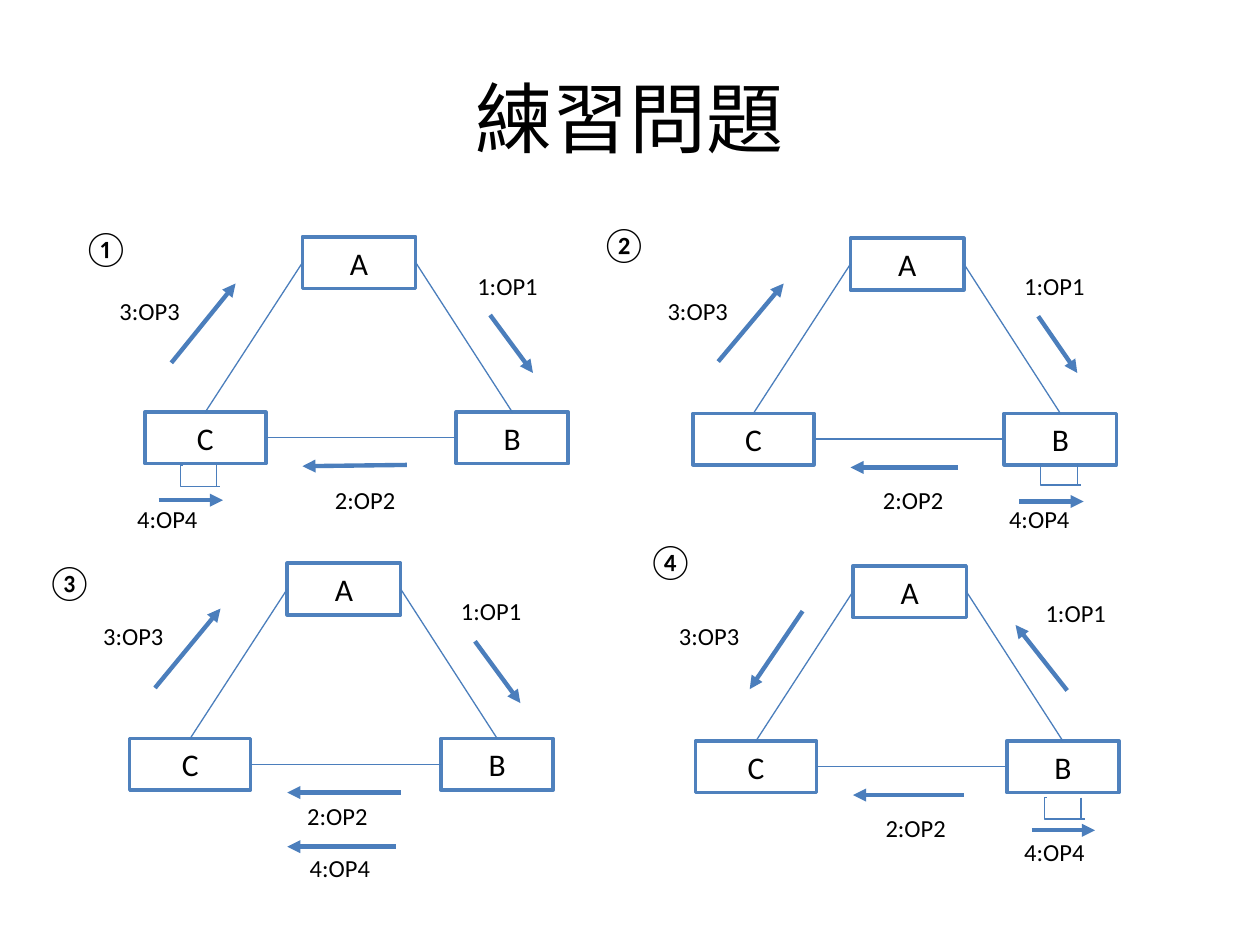
from lxml import etree
from pptx import Presentation
from pptx.dml.color import RGBColor
from pptx.enum.shapes import MSO_CONNECTOR, MSO_SHAPE
from pptx.enum.text import MSO_ANCHOR, MSO_AUTO_SIZE, PP_ALIGN
from pptx.oxml.ns import qn
from pptx.util import Pt

RECT = MSO_SHAPE.RECTANGLE
LINE, ELBOW = MSO_CONNECTOR.STRAIGHT, MSO_CONNECTOR.ELBOW
MIDDLE, CENTER = MSO_ANCHOR.MIDDLE, PP_ALIGN.CENTER
GROW = MSO_AUTO_SIZE.SHAPE_TO_FIT_TEXT
SCALE = 9144
BLACK, WHITE, EDGE, WIRE = "000000", "FFFFFF", "4F81BD", "4B7EBC"
TOP, LEFT, RIGHT = 0, 1, 3
NODES = {"A": (125, 0, 90), "C": (0, 139, 96), "B": (247, 139, 89)}
LINKS = [("C", TOP, "A", LEFT), ("B", LEFT, "C", RIGHT), ("B", TOP, "A", RIGHT)]
DIAGRAMS = [
    dict(box=(115, 188), mark=("①", -59, -13), loop=(30, 181), ops=[
        ((254, 22), (274, 62, 308, 108)), ((141, 192), (208, 181, 125, 182)),
        ((-30, 42), (21, 100, 72, 37)), ((-16, 207), (11, 209, 62, 209))]),
    dict(box=(550, 189), mark=("②", -83, -17), loop=(278, 179), ops=[
        ((253, 21), (274, 62, 305, 107)), ((141, 191), (210, 182, 125, 182)),
        ((-30, 41), (20, 98, 72, 36)), ((241, 206, 69), (259, 209, 310, 209))]),
    dict(box=(103, 447), mark=("③", -76, -7), loop=None, ops=[
        ((253, 21), (274, 62, 310, 111)), ((131, 184), (215, 182, 125, 182)),
        ((-31, 41), (20, 99, 72, 36)), ((133, 225), (211, 225, 125, 225))]),
    dict(box=(552, 449), mark=("④", -48, -26), loop=(279, 184), ops=[
        ((268, 21), (295, 99, 254, 47)), ((141, 191), (213, 182, 125, 182)),
        ((-23, 39), (85, 36, 43, 98)), ((251, 210), (267, 210, 317, 210))]),
]


def px(*nums):
    """Turn px lengths into EMU."""
    return [n * SCALE for n in nums]


def color(code):
    """Make a colour from a hex string."""
    return RGBColor.from_string(code)


def write(frame, text, size, align=None):
    """Set one line of text and its format."""
    frame.text = text
    para = frame.paragraphs[0]
    para.alignment = align
    font = para.runs[0].font
    for name, value in dict(name="Calibri", size=Pt(size)).items():
        setattr(font, name, value)
    font.color.rgb = color(BLACK)


def label(slide, text, size, x, y, wide=133):
    """Add a text box that grows with its text."""
    tall = 44 if size == 20 else 34
    frame = slide.shapes.add_textbox(*px(x, y, wide, tall)).text_frame
    frame.word_wrap = True
    frame.auto_size = GROW
    write(frame, text, size)


def node(slide, text, x, y, wide):
    """Add a named rectangle."""
    shape = slide.shapes.add_shape(RECT, *px(x, y, wide, 41))
    shape.shadow.inherit = False
    shape.fill.solid()
    shape.fill.fore_color.rgb = color(WHITE)
    shape.line.color.rgb = color(EDGE)
    shape.line.width = Pt(2)
    shape.text_frame.vertical_anchor = MIDDLE
    write(shape.text_frame, text, 18, CENTER)
    return shape


def wire(slide, ends=(0, 0, 0, 0), kind=LINE, width=0.75, head=False):
    """Add a connector, with an arrowhead if asked."""
    conn = slide.shapes.add_connector(kind, *px(*ends))
    conn.line.color.rgb = color(WIRE)
    conn.line.width = Pt(width)
    if head:
        etree.SubElement(conn.line._get_or_add_ln(), qn("a:tailEnd"), type="triangle")
    etree.SubElement(conn._element.spPr, qn("a:effectLst"))
    return conn


def loop(slide, x, y):
    """Draw the self link below a node."""
    elbow = wire(slide, (x, y, x + 30, y + 17), ELBOW)
    geom = elbow._element.spPr.find(qn("a:prstGeom"))
    guides = geom.find(qn("a:avLst"))
    etree.SubElement(guides, qn("a:gd"), name="adj1", fmla="val -6500")
    wire(slide, (x + 27, y, x + 27, y + 17))


def diagram(slide, box, mark, loop_at, ops):
    """Draw one numbered triangle of nodes and operations."""
    left, top = box
    nodes = {name: node(slide, name, left + x, top + y, wide)
             for name, (x, y, wide) in NODES.items()}
    for start, out, end, into in LINKS:
        conn = wire(slide)
        conn.begin_connect(nodes[start], out)
        conn.end_connect(nodes[end], into)
    if loop_at:
        loop(slide, left + loop_at[0], top + loop_at[1])
    for num, ((x, y, *wide), (x1, y1, x2, y2)) in enumerate(ops, 1):
        label(slide, f"{num}:OP{num}", 14, left + x, top + y, *wide)
        ends = (left + x1, top + y1, left + x2, top + y2)
        wire(slide, ends, width=2.5, head=True)
    text, x, y = mark
    label(slide, text, 20, left + x, top + y)


def heading(slide, text, box):
    """Place and format the title."""
    title = slide.shapes.title
    for name, value in zip(("left", "top", "width", "height"), px(*box)):
        setattr(title, name, value)
    title.text_frame.vertical_anchor = MIDDLE
    write(title.text_frame, text, 44, CENTER)


def main():
    """Build the slide and save it."""
    deck = Presentation()
    deck.slide_width, deck.slide_height = px(1000, 750)
    slide = deck.slides.add_slide(deck.slide_layouts[5])
    heading(slide, "練習問題", (50, 30, 900, 125))
    for item in DIAGRAMS:
        diagram(slide, item["box"], item["mark"], item["loop"], item["ops"])
    deck.save("out.pptx")


if __name__ == "__main__":
    main()
